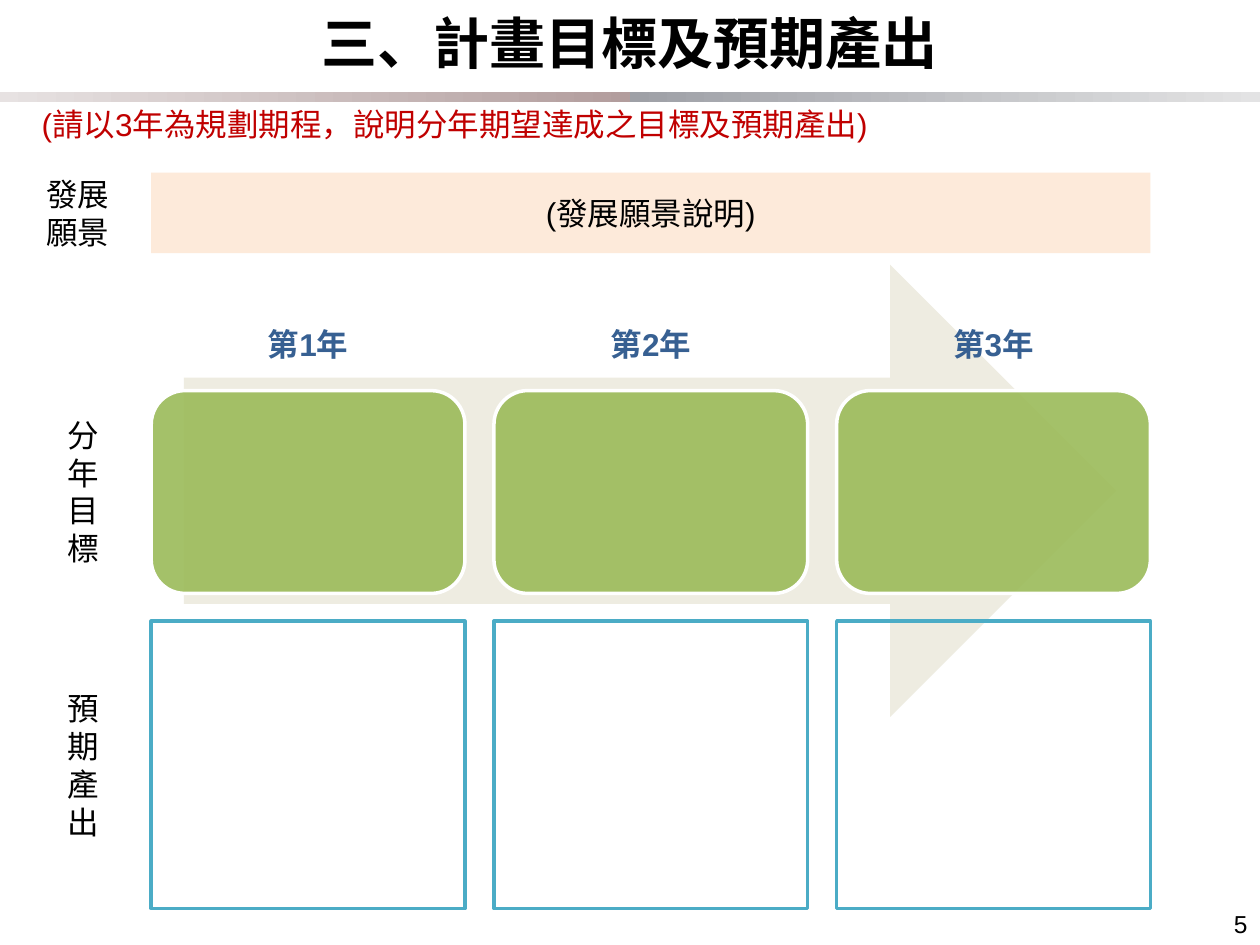
from dataclasses import dataclass

from lxml import etree
from pptx import Presentation
from pptx.dml.color import RGBColor
from pptx.enum.shapes import MSO_SHAPE
from pptx.enum.text import MSO_ANCHOR, MSO_AUTO_SIZE, PP_ALIGN
from pptx.oxml.ns import qn
from pptx.util import Inches, Pt

RECT, ROUND, ARROW = MSO_SHAPE.RECTANGLE, MSO_SHAPE.ROUNDED_RECTANGLE, MSO_SHAPE.RIGHT_ARROW
LEFT, CENTER, RIGHT = PP_ALIGN.LEFT, PP_ALIGN.CENTER, PP_ALIGN.RIGHT
TOP, MIDDLE, BOTTOM = MSO_ANCHOR.TOP, MSO_ANCHOR.MIDDLE, MSO_ANCHOR.BOTTOM

SLIDE_W, SLIDE_H = 10, 7.5
# Grid of three yearly columns
GRID_LEFT, COL_W, PITCH, YEARS = 1.2, 2.49, 2.72, 3
GRID_W = PITCH * (YEARS - 1) + COL_W
LABEL_CENTER = 0.65


@dataclass
class Box:
    left: float
    top: float
    width: float
    height: float

    def emu(self):
        return [Inches(v) for v in (self.left, self.top, self.width, self.height)]


@dataclass
class RowLabel:
    text: str
    top: float
    width: float
    height: float


ROW_LABELS = [
    RowLabel("分年目標", 3.25, 0.43, 1.31),
    RowLabel("預期產出", 5.42, 0.43, 1.31),
    RowLabel("發展願景", 1.34, 0.76, 0.71),
]


def rgb(color: str) -> RGBColor:
    return RGBColor.from_string(color)


def column(i: int, top: float, height: float, width: float = COL_W) -> Box:
    """Box centred in yearly column i."""
    return Box(GRID_LEFT + i * PITCH + (COL_W - width) / 2, top, width, height)


def write(s, text: str, *, size=18, color="000000", bold=False, align=LEFT, anchor=TOP):
    tf = s.text_frame
    tf.word_wrap = True
    tf.auto_size = MSO_AUTO_SIZE.NONE
    tf.vertical_anchor = anchor
    p = tf.paragraphs[0]
    p.alignment = align
    p.space_before = Pt(0)
    r = p.add_run()
    r.text = text
    r.font.name = "Arial"
    r.font.size = Pt(size)
    r.font.bold = bold
    r.font.color.rgb = rgb(color)
    return p


def add_text(slide, box: Box, text: str, **style):
    return write(slide.shapes.add_textbox(*box.emu()), text, **style)


def fill_placeholder(s, box: Box, text: str, **style):
    s.left, s.top, s.width, s.height = box.emu()
    return write(s, text, **style)


def add_shape(slide, kind, box: Box, *, fill=None, alpha=None, line=None):
    s = slide.shapes.add_shape(kind, *box.emu())
    s.shadow.inherit = False
    if fill:
        s.fill.solid()
        s.fill.fore_color.rgb = rgb(fill)
    else:
        s.fill.background()
    if alpha:
        clr = s.fill._xPr.find(qn("a:solidFill"))[0]
        etree.SubElement(clr, qn("a:alpha")).set("val", str(alpha * 1000))
    if line:
        s.line.color.rgb = rgb(line)
        s.line.width = Pt(2)
    else:
        s.line.fill.background()
    return s


def add_gradient_bar(slide, box: Box, start: str, end: str):
    s = add_shape(slide, RECT, box)
    s.fill.gradient()
    s.fill.gradient_angle = 0
    for stop, color in zip(s.fill.gradient_stops, (start, end)):
        stop.color.rgb = rgb(color)


def main():
    prs = Presentation()
    prs.slide_width, prs.slide_height = Inches(SLIDE_W), Inches(SLIDE_H)
    slide = prs.slides.add_slide(prs.slide_layouts[1])
    title, body = slide.placeholders

    # Page number and divider
    add_text(slide, Box(7.67, 6.98, 2.33, 0.52), "5", size=14, align=RIGHT, anchor=BOTTOM)
    half = SLIDE_W / 2
    add_gradient_bar(slide, Box(0, 0.73, half, 0.08), "E7E2E2", "B29D9D")
    add_gradient_bar(slide, Box(half, 0.73, half, 0.08), "9EA0A6", "E3E3E4")

    # Title and instruction
    p = fill_placeholder(title, Box(0, 0.13, SLIDE_W, 0.52), "三、計畫目標及預期產出",
                         size=32, bold=True, align=CENTER, anchor=MIDDLE)
    p.line_spacing = Pt(30)
    p.space_before = Pt(6)
    p = fill_placeholder(body, Box(0.23, 0.78, 9.61, 0.4),
                         "(請以3年為規劃期程，說明分年期望達成之目標及預期產出)", color="C00000")
    pPr = p._p.get_or_add_pPr()
    pPr.set("marL", "0")
    pPr.set("indent", "0")
    etree.SubElement(pPr, qn("a:buNone"))

    # Arrow behind the yearly columns
    add_shape(slide, ARROW, Box(1.46, 2.1, 7.4, 3.59), fill="EEECE1")

    # Yearly goals, headings and outputs
    for i in range(YEARS):
        add_shape(slide, ROUND, column(i, 3.1, 1.61), fill="9BBB59", alpha=90, line="FFFFFF")
        add_text(slide, column(i, 2.53, 0.4, width=0.98), f"第{i + 1}年",
                 color="376092", bold=True, align=CENTER)
        add_shape(slide, RECT, column(i, 4.93, 2.28), line="4BACC6")

    # Row labels
    for label in ROW_LABELS:
        left = LABEL_CENTER - label.width / 2
        add_text(slide, Box(left, label.top, label.width, label.height), label.text)

    # Vision banner
    banner = add_shape(slide, RECT, Box(GRID_LEFT, 1.37, GRID_W, 0.64), fill="FDEADA")
    write(banner, "(發展願景說明)", align=CENTER, anchor=MIDDLE)

    prs.save("out.pptx")


if __name__ == "__main__":
    main()
